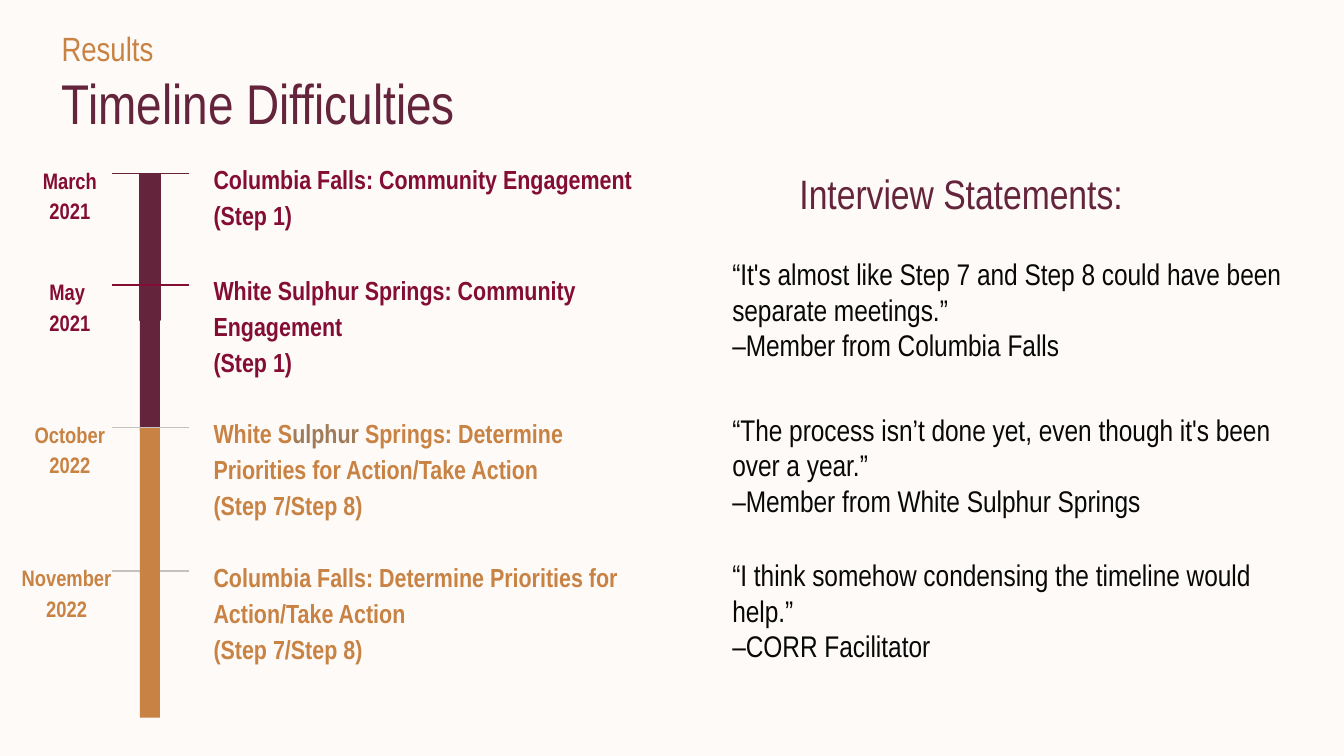
from lxml import etree
from pptx import Presentation
from pptx.dml.color import RGBColor
from pptx.enum.shapes import MSO_CONNECTOR, MSO_SHAPE
from pptx.enum.text import MSO_ANCHOR, PP_ALIGN
from pptx.oxml.ns import qn
from pptx.util import Inches, Pt

RECTANGLE = MSO_SHAPE.RECTANGLE
STRAIGHT = MSO_CONNECTOR.STRAIGHT
TOP = MSO_ANCHOR.TOP
LEFT, CENTER = PP_ALIGN.LEFT, PP_ALIGN.CENTER

COLORS = {
    "page": "FDFAF7",
    "ochre": "C88243",
    "plum": "64243C",
    "wine": "840D35",
    "taupe": "9E7B5B",
    "gray": "C2C2C2",
    "ink": "070807",
}

deck = Presentation()
deck.slide_width = Inches(10)
deck.slide_height = Inches(10 * 9 / 16)
CELL = deck.slide_width / 100  # square grid, 100 columns wide


def color(name):
    return RGBColor.from_string(COLORS[name])


def add_text(page, cells, paragraphs, align=LEFT, spacing=None, bold=False):
    """Each paragraph is a list of (text, size, color) spans."""
    box = page.shapes.add_textbox(*(round(n * CELL) for n in cells))
    frame = box.text_frame
    settings = {"word_wrap": True, "vertical_anchor": TOP}
    for side in ("left", "right", "top", "bottom"):
        settings[f"margin_{side}"] = round(CELL)
    for name, value in settings.items():
        setattr(frame, name, value)
    for index, spans in enumerate(paragraphs):
        para = frame.add_paragraph() if index else frame.paragraphs[0]
        para.alignment = align
        para.line_spacing = spacing
        for text, size, tint in spans:
            span = para.add_run()
            span.text = text
            font = {"name": "Arial Narrow", "size": Pt(size), "bold": bold}
            for name, value in font.items():
                setattr(span.font, name, value)
            span.font.color.rgb = color(tint)


page = deck.slides.add_slide(deck.slide_layouts[6])
page.background.fill.solid()
page.background.fill.fore_color.rgb = color("page")

# Headings
add_text(page, (3.6, 1.1, 92.7, 9.7),
         [[("Results", 18, "ochre")], [("Timeline Difficulties", 30, "plum")]])
add_text(page, (58.5, 11.5, 32.8, 5.7), [[("Interview Statements:", 22, "plum")]])

# Interview quotes
quotes = [
    (18, "“It's almost like Step 7 and Step 8 could have been separate meetings.”",
     "–Member from Columbia Falls"),
    (29.6, "“The process isn’t done yet, even though it's been over a year.”",
     "–Member from White Sulphur Springs"),
    (40.4, "“I think somehow condensing the timeline would help.”",
     "–CORR Facilitator"),
]
for row, *lines in quotes:
    add_text(page, (53.5, row, 42.9, 10.1), [[(line, 16, "ink")] for line in lines])

# Timeline steps, back to front: row, bar, tick and text colors, date, description
steps = [
    (12.9, "plum", "plum", "wine", 10.4, ("March", "2021"),
     [[("Columbia Falls: Community Engagement (Step 1)", "wine")]]),
    (21.2, "plum", "wine", "wine", 10.4, ("May ", "2021"),
     [[("White Sulphur Springs: Community Engagement", "wine")],
      [("(Step 1)", "wine")]]),
    (42.5, "ochre", "gray", "ochre", 9.9, ("November", "2022"),
     [[("Columbia Falls: Determine Priorities for Action/Take Action", "ochre")],
      [("(Step 7/Step 8)", "ochre")]]),
    (31.8, "ochre", "gray", "ochre", 10.4, ("October", "2022"),
     [[("White S", "ochre"), ("ulphur", "taupe"),
       (" Springs: Determine Priorities for Action/Take Action", "ochre")],
      [("(Step 7/Step 8)", "ochre")]]),
]
for row, bar_color, tick_color, text_color, date_width, date, description in steps:
    # Bar segment; only the first one is outlined
    bar = page.shapes.add_shape(
        RECTANGLE, *(round(n * CELL) for n in (10.4, row, 1.5, 10.9)))
    bar.shadow.inherit = False
    bar.fill.solid()
    bar.fill.fore_color.rgb = color(bar_color)
    if row == steps[0][0]:
        bar.line.color.rgb = color(bar_color)
        bar.line.width = Pt(0.75)
    else:
        bar.line.fill.background()

    # Tick across the top of the segment
    tick = page.shapes.add_connector(
        STRAIGHT, *(round(n * CELL) for n in (14.1, row, 8.3, row)))
    tick.line.color.rgb = color(tick_color)
    tick.line.width = Pt(0.75)
    etree.SubElement(tick.element.spPr, qn("a:effectLst"))

    # Description and date
    add_text(page, (14.9, row - 2.1, 35.1, 7),
             [[(text, 14, tint) for text, tint in spans] for spans in description],
             spacing=1.15, bold=True)
    add_text(page, (0, row - 1.8, date_width, 6.5),
             [[(line, 12, text_color)] for line in date],
             align=CENTER, spacing=1.15, bold=True)

deck.save("out.pptx")
